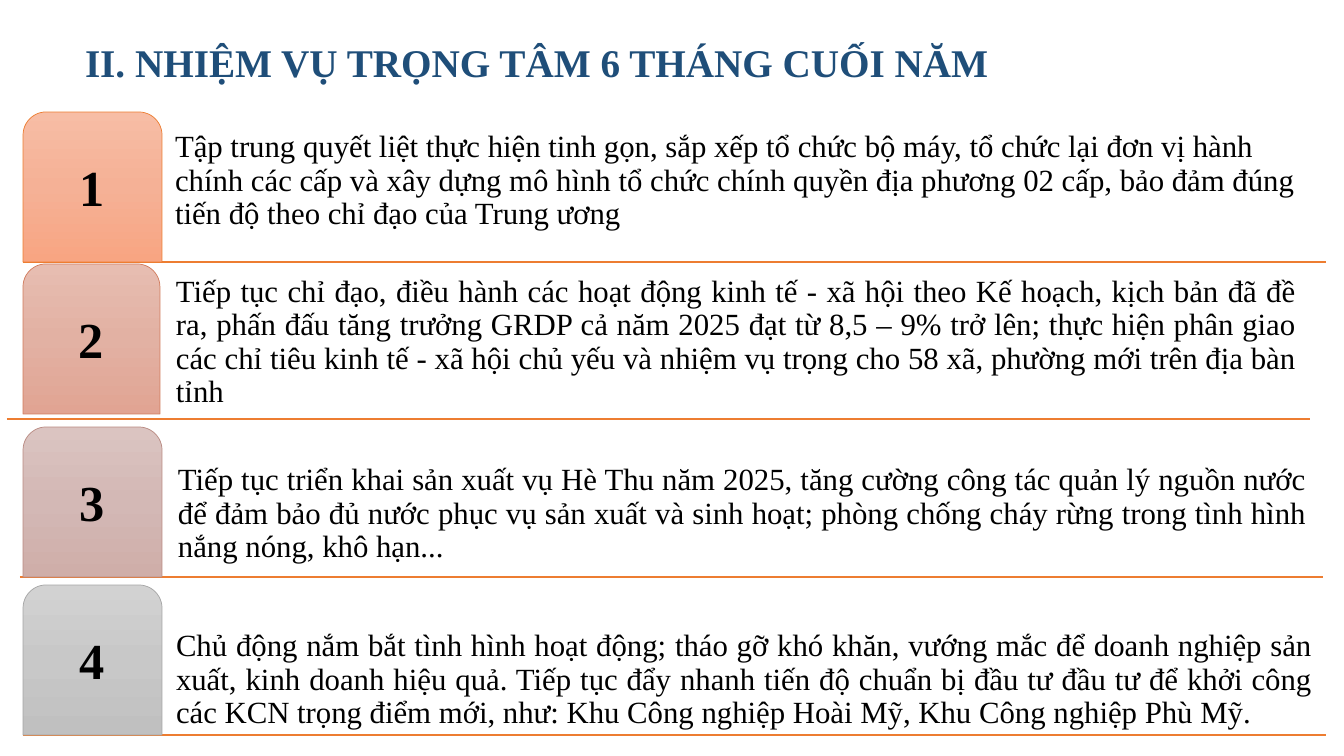
from copy import deepcopy
from dataclasses import dataclass

from lxml import etree
from pptx import Presentation
from pptx.dml.color import RGBColor
from pptx.enum.shapes import MSO_CONNECTOR, MSO_SHAPE
from pptx.enum.text import MSO_ANCHOR, MSO_AUTO_SIZE, PP_ALIGN
from pptx.oxml.ns import qn
from pptx.util import Pt

EMU_PER_PX = 914400 / 100.8
STRAIGHT = MSO_CONNECTOR.STRAIGHT
TAB_SHAPE = MSO_SHAPE.ROUND_2_SAME_RECTANGLE
TOP, MIDDLE, BOTTOM = MSO_ANCHOR.TOP, MSO_ANCHOR.MIDDLE, MSO_ANCHOR.BOTTOM
LEFT, CENTER, JUSTIFY = PP_ALIGN.LEFT, PP_ALIGN.CENTER, PP_ALIGN.JUSTIFY
TITLE_ONLY = 5


@dataclass(frozen=True)
class Theme:
    """Colours, type sizes and line widths of the slide."""
    font: str = "Times New Roman"
    title_color: str = "1F4E79"
    text_color: str = "000000"
    rule_color: str = "ED7D31"
    title_size: int = 28
    number_size: int = 36
    body_size: int = 22
    line_spacing: float = 0.9
    rule_width: float = 1
    badge_line_width: float = 0.5


@dataclass(frozen=True)
class Task:
    """One numbered task; text_box and rule are offsets in px from the row's corner."""
    text: str
    top: int
    text_box: tuple
    rule: tuple
    gradient: tuple
    outline: str
    badge_width: int = 139
    alignment: PP_ALIGN = JUSTIFY


THEME = Theme()
ROW_LEFT, ROW_HEIGHT, RULE_LENGTH = 23, 150, 1303
TITLE = "II. NHIỆM VỤ TRỌNG TÂM 6 THÁNG CUỐI NĂM"
TASKS = [
    Task("Tập trung quyết liệt thực hiện tinh gọn, sắp xếp tổ chức bộ máy, tổ chức lại "
         "đơn vị hành chính các cấp và xây dựng mô hình tổ chức chính quyền địa phương "
         "02 cấp, bảo đảm đúng tiến độ theo chỉ đạo của Trung ương",
         112, (147, 46, 1154, 78), (0, 150),
         ("F7BDA5", "F5B196", "F8A582"), "ED7D31", alignment=LEFT),
    Task("Tiếp tục chỉ đạo, điều hành các hoạt động kinh tế - xã hội theo Kế hoạch, kịch "
         "bản đã đề ra, phấn đấu tăng trưởng GRDP cả năm 2025 đạt từ 8,5 – 9% trở lên; "
         "thực hiện phân giao các chỉ tiêu kinh tế - xã hội chủ yếu và nhiệm vụ trọng cho "
         "58 xã, phường mới trên địa bàn tỉnh",
         264, (148, 0, 1130, 150), (-16, 155),
         ("E7BDB1", "E2B1A3", "E1A493"), "D17B5C", badge_width=137),
    Task("Tiếp tục triển khai sản xuất vụ Hè Thu năm 2025, tăng cường công tác quản lý "
         "nguồn nước để đảm bảo đủ nước phục vụ sản xuất và sinh hoạt; phòng chống cháy "
         "rừng trong tình hình nắng nóng, khô hạn...",
         427, (150, 18, 1138, 124), (-3, 150),
         ("DBC4C1", "D3B8B5", "CFAEA9"), "B98A82"),
    Task("Chủ động nắm bắt tình hình hoạt động; tháo gỡ khó khăn, vướng mắc để doanh "
         "nghiệp sản xuất, kinh doanh hiệu quả. Tiếp tục đẩy nhanh tiến độ chuẩn bị đầu tư "
         "đầu tư để khởi công các KCN trọng điểm mới, như: Khu Công nghiệp Hoài Mỹ, Khu "
         "Công nghiệp Phù Mỹ.",
         585, (148, 0, 1146, 150), (0, 150),
         ("D2D2D2", "C8C8C8", "C0C0C0"), "A5A5A5"),
]


def px(*lengths):
    """Turn px lengths into a list of EMU lengths."""
    return [round(length * EMU_PER_PX) for length in lengths]


def write_text(shape, text, size, color, alignment, anchor, inset,
               bold=False, line_spacing=None):
    """Write one formatted paragraph into a shape."""
    frame = shape.text_frame
    frame.word_wrap = True
    frame.auto_size = MSO_AUTO_SIZE.NONE
    frame.vertical_anchor = anchor
    frame.margin_left = frame.margin_right = px(inset)[0]
    frame.margin_top = frame.margin_bottom = px(min(inset, 7))[0]
    paragraph = frame.paragraphs[0]
    paragraph.text = text
    paragraph.alignment = alignment
    if line_spacing:
        paragraph.line_spacing = line_spacing
    paragraph.font.name = THEME.font
    paragraph.font.size = Pt(size)
    paragraph.font.bold = bold
    paragraph.font.color.rgb = RGBColor.from_string(color)


def add_title(slide, left, top, width, height):
    """Place the heading in the title placeholder."""
    title = slide.shapes.title
    title.left, title.top, title.width, title.height = px(left, top, width, height)
    write_text(title, TITLE, THEME.title_size, THEME.title_color, LEFT, TOP, 10, bold=True)


def add_rule(slide, left, top, length):
    """Draw a thin horizontal rule."""
    rule = slide.shapes.add_connector(STRAIGHT, *px(left, top, left + length, top))
    rule.line.color.rgb = RGBColor.from_string(THEME.rule_color)
    rule.line.width = Pt(THEME.rule_width)
    etree.SubElement(rule._element.spPr, qn("a:effectLst"))


def fill_gradient(shape, colors):
    """Fill a shape from top to bottom with evenly spaced colours."""
    shape.fill.gradient()
    shape.fill.gradient_angle = 270
    stop_list = shape._element.spPr.find(".//" + qn("a:gsLst"))
    while len(stop_list) < len(colors):
        stop_list.append(deepcopy(stop_list[-1]))
    for index, (stop, color) in enumerate(zip(shape.fill.gradient_stops, colors)):
        stop.position = index / (len(colors) - 1)
        stop.color.rgb = RGBColor.from_string(color)


def add_badge(slide, number, task, left, top, width, height):
    """Draw the round-topped badge that holds the task's number."""
    badge = slide.shapes.add_shape(TAB_SHAPE, *px(left, top, width, height))
    badge.shadow.inherit = False
    fill_gradient(badge, task.gradient)
    badge.line.color.rgb = RGBColor.from_string(task.outline)
    badge.line.width = Pt(THEME.badge_line_width)
    write_text(badge, str(number), THEME.number_size, THEME.text_color, CENTER, MIDDLE, 7,
               bold=True, line_spacing=THEME.line_spacing)


def add_task_row(slide, number, task, left, top, height):
    """Build one row: rule, text and numbered badge."""
    rule_x, rule_y = task.rule
    add_rule(slide, left + rule_x, top + rule_y, RULE_LENGTH)
    text_x, text_y, text_width, text_height = task.text_box
    text_box = slide.shapes.add_textbox(
        *px(left + text_x, top + text_y, text_width, text_height))
    write_text(text_box, task.text, THEME.body_size, THEME.text_color, task.alignment,
               BOTTOM, 5, line_spacing=THEME.line_spacing)
    add_badge(slide, number, task, left, top, task.badge_width, height)


def main():
    """Build and save the presentation."""
    presentation = Presentation()
    presentation.slide_width, presentation.slide_height = px(1344, 756)
    slide = presentation.slides.add_slide(presentation.slide_layouts[TITLE_ONLY])
    add_title(slide, 75, 31, 955, 57)
    for number, task in enumerate(TASKS, start=1):
        add_task_row(slide, number, task, ROW_LEFT, task.top, ROW_HEIGHT)
    presentation.save("out.pptx")


if __name__ == "__main__":
    main()
